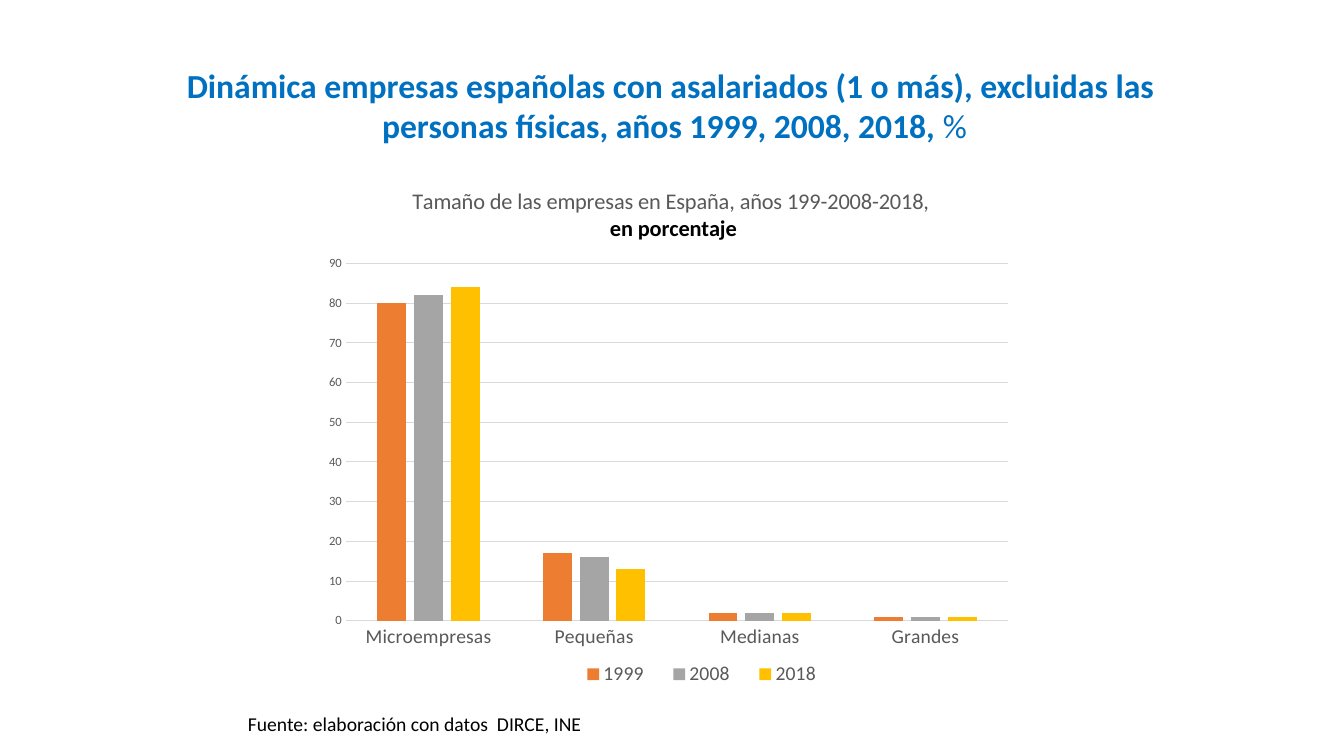
from lxml.etree import SubElement
from pptx import Presentation
from pptx.chart.data import CategoryChartData
from pptx.dml.color import RGBColor
from pptx.enum.chart import XL_CHART_TYPE, XL_LEGEND_POSITION, XL_TICK_MARK
from pptx.enum.text import PP_ALIGN
from pptx.oxml.ns import qn
from pptx.util import Inches, Pt

BLUE = RGBColor(0x00, 0x70, 0xC0)
BLACK = RGBColor(0x00, 0x00, 0x00)
GRAY = RGBColor(0x59, 0x59, 0x59)
LIGHT_GRAY = RGBColor(0xD9, 0xD9, 0xD9)
FONT = "Calibri"

SIZES = ["Microempresas", "Pequeñas", "Medianas", "Grandes"]
YEARS = [
    ("1999", [80, 17, 2, 1], RGBColor(0xED, 0x7D, 0x31)),
    ("2008", [82, 16, 2, 1], RGBColor(0xA5, 0xA5, 0xA5)),
    ("2018", [84, 13, 2, 1], RGBColor(0xFF, 0xC0, 0x00)),
]


def style_font(font, size, color, bold=False):
    font.name = FONT
    font.size = Pt(size)
    font.bold = bold
    font.color.rgb = color


def write_text(frame, paragraphs, size, color, align=PP_ALIGN.LEFT):
    """Fill a text frame; each paragraph is a list of (text, bold) spans."""
    for index, spans in enumerate(paragraphs):
        para = frame.paragraphs[0] if index == 0 else frame.add_paragraph()
        para.alignment = align
        for text, bold in spans:
            span = para.add_run()
            span.text = text
            style_font(span.font, size, color, bold)


def add_text(page, box, paragraphs, **text_format):
    frame = page.shapes.add_textbox(*map(Inches, box)).text_frame
    frame.word_wrap = True
    write_text(frame, paragraphs, **text_format)


def place_part(part, position, inner=False, **fractions):
    """Give a chart part a manual layout in fractions of the chart."""
    for old_layout in part.findall(qn("c:layout")):
        part.remove(old_layout)
    layout = SubElement(part, qn("c:layout"))
    part.insert(position, layout)
    manual = SubElement(layout, qn("c:manualLayout"))
    if inner:
        SubElement(manual, qn("c:layoutTarget")).set("val", "inner")
    for mode in ("xMode", "yMode"):
        SubElement(manual, qn(f"c:{mode}")).set("val", "edge")
    for name, value in fractions.items():
        SubElement(manual, qn(f"c:{name}")).set("val", str(value))


def style_axis(axis, size):
    axis.major_tick_mark = XL_TICK_MARK.NONE
    axis.minor_tick_mark = XL_TICK_MARK.NONE
    style_font(axis.tick_labels.font, size, GRAY)


def style_line(line):
    line.color.rgb = LIGHT_GRAY
    line.width = Pt(0.75)


def add_size_chart(page, box):
    data = CategoryChartData(number_format="General")
    data.categories = SIZES
    for year, shares, _ in YEARS:
        data.add_series(year, shares)
    chart = page.shapes.add_chart(
        XL_CHART_TYPE.COLUMN_CLUSTERED, *map(Inches, box), data
    ).chart
    style_font(chart.font, 10, BLACK)

    plot = chart.plots[0]
    plot.vary_by_categories = False
    plot.gap_width = 219
    plot.overlap = -27
    for series, (_, _, color) in zip(plot.series, YEARS):
        series.format.fill.solid()
        series.format.fill.fore_color.rgb = color

    style_axis(chart.category_axis, 14)
    style_line(chart.category_axis.format.line)
    values = chart.value_axis
    style_axis(values, 9)
    values.minimum_scale, values.maximum_scale, values.major_unit = 0, 90, 10
    values.format.line.fill.background()
    style_line(values.major_gridlines.format.line)

    chart.has_title = True
    title = chart.chart_title
    write_text(title.text_frame,
               [[("Tamaño de las empresas en España, años 199-2008-2018, ", False)],
                [("en porcentaje", True)]],
               size=16, color=GRAY, align=PP_ALIGN.CENTER)
    title.text_frame.paragraphs[1].runs[0].font.color.rgb = BLACK
    title.include_in_layout = False

    chart.has_legend = True
    legend = chart.legend
    legend.position = XL_LEGEND_POSITION.BOTTOM
    legend.include_in_layout = False
    style_font(legend.font, 14, GRAY)

    plot_area = chart.element.find(".//" + qn("c:plotArea"))
    place_part(plot_area, 0, inner=True, x=0.04, y=0.19, w=0.94, h=0.67)
    place_part(chart.element.find(".//" + qn("c:title")), 1, x=0.13, y=0.04)
    place_part(chart.element.find(".//" + qn("c:legend")), 1,
               x=0.35, y=0.93, w=0.39, h=0.06)


def main():
    deck = Presentation()
    deck.slide_width, deck.slide_height = Inches(13.33), Inches(7.5)
    page = deck.slides.add_slide(deck.slide_layouts[6])
    add_text(page, (0.66, 0.59, 12.06, 0.91),
             [[("Dinámica empresas españolas con asalariados (1 o más), excluidas las ", True)],
              [("personas físicas, años 1999, 2008, 2018, ", True), ("%", False)]],
             size=24, color=BLUE, align=PP_ALIGN.CENTER)
    add_size_chart(page, (3.15, 1.61, 6.99, 5.29))
    add_text(page, (2.36, 7.01, 3.7, 0.34),
             [[("Fuente: elaboración con datos  DIRCE, INE", False)]],
             size=14, color=BLACK)
    deck.save("out.pptx")


if __name__ == "__main__":
    main()
